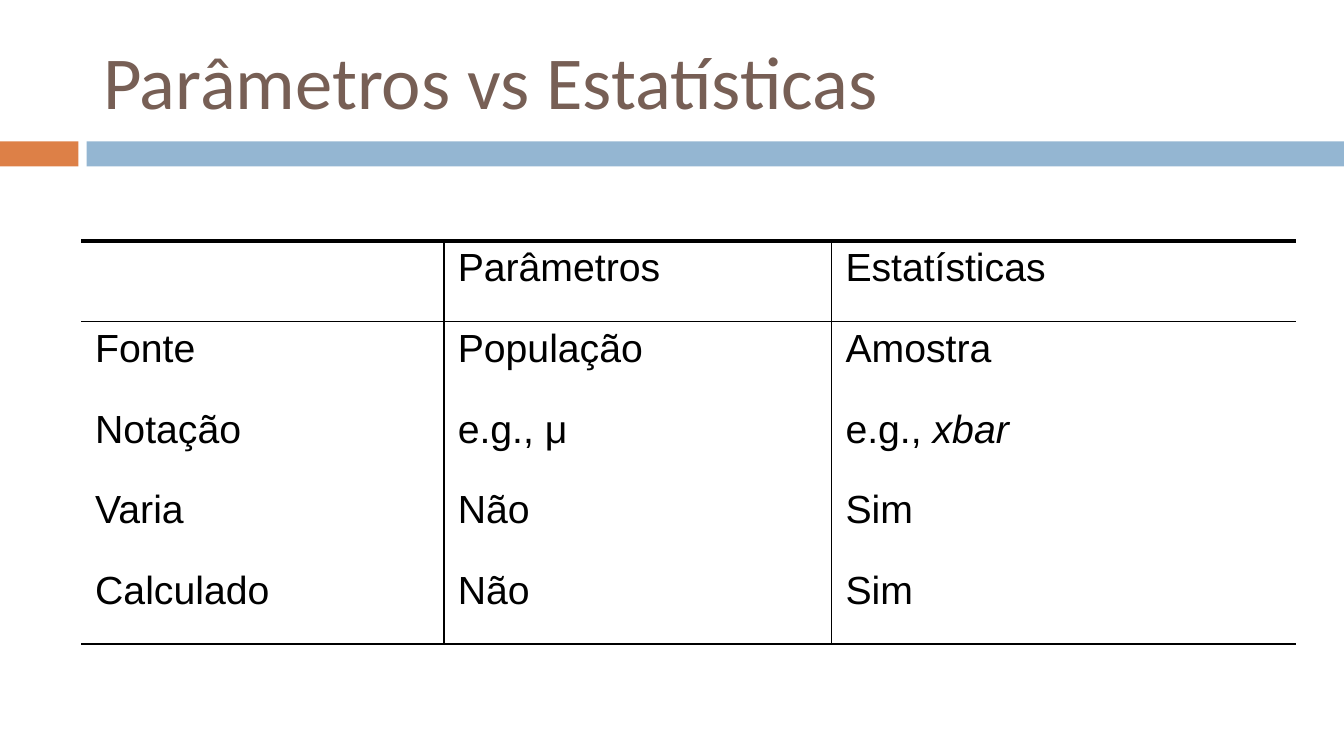
from dataclasses import dataclass

from lxml.etree import SubElement as Sub
from pptx import Presentation
from pptx.dml.color import RGBColor as RGB
from pptx.enum.shapes import MSO_SHAPE as SHAPE
from pptx.enum.text import MSO_ANCHOR as ANCHOR, MSO_AUTO_SIZE as FIT, PP_ALIGN as ALIGN
from pptx.oxml.ns import qn
from pptx.util import Pt

PX = 9525


@dataclass(frozen=True)
class Theme:
    accent: str = "DD8047"
    band: str = "94B6D2"
    title: str = "775F55"
    ink: str = "000000"
    title_font: str = "Calibri"
    body_font: str = "Arial"
    title_size: int = 40
    body_size: int = 21
    thin: float = 1
    thick: float = 2.25


T = Theme()

COLS = [259, 277, 332]
ROWS = [
    ["", "Parâmetros", "Estatísticas"],
    ["Fonte", "População", "Amostra"],
    ["Notação", "e.g., μ", [("e.g., ", False), ("xbar", True)]],
    ["Varia", "Não", "Sim"],
    ["Calculado", "Não", "Sim"],
]


def px(*values):
    return [round(v * PX) for v in values]


def put_text(tf, text, *, font, size, color, before=0):
    p = tf.paragraphs[0]
    p.alignment = ALIGN.LEFT
    if before:
        spacing = Sub(p._p.get_or_add_pPr(), qn("a:spcBef"))
        Sub(spacing, qn("a:spcPct"), val=str(before * 1000))
    for part, italic in [(text, False)] if isinstance(text, str) else text:
        r = p.add_run()
        r.text = part
        r.font.name = font
        r.font.size = Pt(size)
        r.font.italic = italic
        r.font.color.rgb = RGB.from_string(color)


def add_title(s, box, text):
    sp = s.shapes.title
    sp.left, sp.top, sp.width, sp.height = px(*box)
    tf = sp.text_frame
    tf.word_wrap = True
    tf.auto_size = FIT.NONE
    tf.vertical_anchor = ANCHOR.MIDDLE
    put_text(tf, text, font=T.title_font, size=T.title_size, color=T.title)


def add_band(s, box):
    x, y, w, h = box
    for dx, width, color in ((0, 56, T.accent), (62, w - 62, T.band)):
        sp = s.shapes.add_shape(SHAPE.RECTANGLE, *px(x + dx, y, width, h))
        sp.shadow.inherit = False
        sp.fill.solid()
        sp.fill.fore_color.rgb = RGB.from_string(color)
        sp.line.fill.background()


def set_borders(cell, **widths):
    props = cell._tc.get_or_add_tcPr()
    for side in "LRTB":
        width = widths[side]
        ln = Sub(props, qn(f"a:ln{side}"), w=str(Pt(width)))
        if width:
            Sub(Sub(ln, qn("a:solidFill")), qn("a:srgbClr"), val=T.ink)
        else:
            Sub(ln, qn("a:noFill"))


def add_comparison(s, box):
    last_row, last_col = len(ROWS) - 1, len(COLS) - 1
    table = s.shapes.add_table(len(ROWS), len(COLS), *px(*box)).table
    table.first_row = table.horz_banding = False
    for col, width in zip(table.columns, COLS):
        col.width = px(width)[0]
    for row in table.rows:
        row.height = px(box[3] / len(ROWS))[0]
    for i, row in enumerate(ROWS):
        for j, text in enumerate(row):
            cell = table.cell(i, j)
            set_borders(
                cell,
                L=T.thin if j else 0,
                R=T.thin if j < last_col else 0,
                T={0: T.thick, 1: T.thin}.get(i, 0),
                B=T.thin if i in (0, last_row) else 0,
            )
            cell.fill.background()
            cell.vertical_anchor = ANCHOR.TOP
            cell.margin_left, cell.margin_right = px(10, 10)
            cell.margin_top, cell.margin_bottom = px(4, 4)
            if text:
                put_text(cell.text_frame, text, font=T.body_font, size=T.body_size,
                         color=T.ink, before=20)


def main():
    prs = Presentation()
    prs.slide_width, prs.slide_height = px(960, 540)
    s = prs.slides.add_slide(prs.slide_layouts[5])
    add_band(s, (0, 101, 960, 18))
    add_title(s, (64, 18, 856, 78), "Parâmetros vs Estatísticas")
    add_comparison(s, (58, 172, sum(COLS), 288))
    prs.save("out.pptx")


if __name__ == "__main__":
    main()
